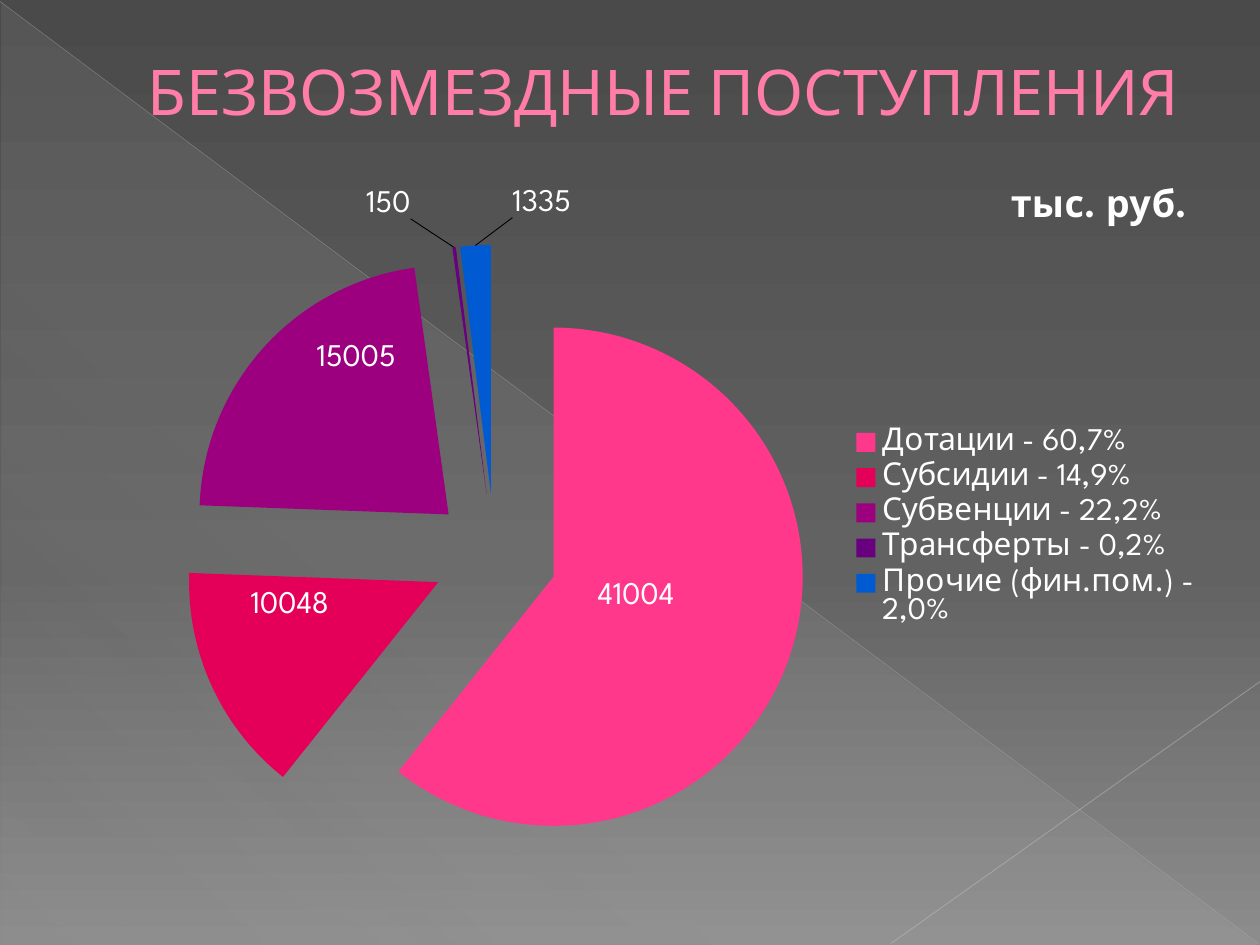
from lxml import etree
from pptx import Presentation
from pptx.chart.data import CategoryChartData
from pptx.dml.color import RGBColor
from pptx.enum import chart as kinds, shapes, text
from pptx.oxml import parse_xml
from pptx.oxml.ns import nsdecls, qn
from pptx.util import Cm, Pt

FONT = "League Spartan"
HUES = {
    "title": "FF7DA7", "edge": "B12761", "text": "FFFFFF", "lead": "000000",
    "long": "BFBFBF", "short": "C6C6C6",
}
TITLE = "БЕЗВОЗМЕЗДНЫЕ ПОСТУПЛЕНИЯ"
UNIT = "тыс. руб."
SLICES = [
    ("Дотации - 60,7%", 41004, "FF388C", (-0.03, -0.03)),
    ("Субсидии - 14,9%", 10048, "E40059", (-0.03, -0.04)),
    ("Субвенции - 22,2%", 15005, "9C007F", (0, -0.1)),
    ("Трансферты - 0,2%", 150, "68007F", (-0.07, -0.23)),
    ("Прочие (фин.пом.) - 2,0%", 1335, "005BD3", (0.05, -0.23)),
]
BACK = [(0, "4A4A4A", 100), (60, "626262", 100), (100, "8C8C8C", 100)]
SHEEN = [(0, "D2D2D2", 10), (70, "D2D2D2", 8), (100, "D2D2D2", 1)]
RAYS = [
    ((0, 0.03), (25.37, 19.02), "long", 0.39, 35),
    ((25.4, 13.74), (17.96, 19.02), "short", 0.47, 45),
]


def write(frame, words, size, hue="text", bold=False):
    frame.text = words
    style(frame.paragraphs[0].runs[0].font, size, hue, bold)
    return frame.paragraphs[0]


def style(font, size, hue="text", bold=False):
    font.name, font.size, font.bold = FONT, Pt(size), bold
    font.color.rgb = RGBColor.from_string(HUES[hue])


def blend(fill, stops, angle):
    fill.gradient()
    grad = fill._fill._gradFill
    steps = grad.find(qn("a:gsLst"))
    for old in list(steps):
        steps.remove(old)
    for pos, hue, alpha in stops:
        steps.append(parse_xml(
            f'<a:gs {nsdecls("a")} pos="{pos * 1000}"><a:srgbClr val="{hue}">'
            f'<a:alpha val="{alpha * 1000}"/></a:srgbClr></a:gs>'))
    grad.find(qn("a:lin")).set("ang", str(angle * 60000))


def place(node, index, **parts):
    for old in node.findall(qn("c:layout")):
        node.remove(old)
    body = "".join(f'<c:{key} val="{val}"/>' for key, val in parts.items())
    node.insert(index, parse_xml(
        f'<c:layout {nsdecls("c")}><c:manualLayout>{body}'
        '</c:manualLayout></c:layout>'))


def add_back(slide):
    blend(slide.background.fill, BACK, 90)
    sheen = slide.shapes.add_shape(
        shapes.MSO_SHAPE.RIGHT_TRIANGLE, Cm(0.03), Cm(0.05), Cm(25.35), Cm(19))
    sheen.shadow.inherit = False
    sheen.line.fill.background()
    blend(sheen.fill, SHEEN, 133)
    for start, end, hue, width, alpha in RAYS:
        ray = slide.shapes.add_connector(
            shapes.MSO_CONNECTOR.STRAIGHT, *map(Cm, start + end))
        ray.line.color.rgb = RGBColor.from_string(HUES[hue])
        ray.line.width = Pt(width)
        props = ray._element.spPr
        tint = props.find(".//" + qn("a:srgbClr"))
        etree.SubElement(tint, qn("a:alpha")).set("val", str(alpha * 1000))
        etree.SubElement(props, qn("a:effectLst"))


def add_title(slide):
    title = slide.shapes.title
    title.left, title.top, title.width, title.height = map(
        Cm, (1.27, 0.74, 22.86, 2.18))
    title.text_frame.vertical_anchor = text.MSO_ANCHOR.MIDDLE
    para = write(title.text_frame, TITLE, 36, "title")
    para.alignment = text.PP_ALIGN.CENTER
    props = para._p.get_or_add_pPr()
    props.set("marL", str(Cm(1.35)))
    props.set("indent", "0")
    para.runs[0].font._element.insert(0, parse_xml(
        f'<a:ln {nsdecls("a")} w="6350"><a:solidFill>'
        f'<a:srgbClr val="{HUES["edge"]}"/></a:solidFill></a:ln>'))
    slide.shapes._spTree.append(title._element)


def add_pie(slide):
    data = CategoryChartData()
    data.categories = [row[0] for row in SLICES]
    data.add_series("Series 1", [row[1] for row in SLICES])
    chart = slide.shapes.add_chart(
        kinds.XL_CHART_TYPE.PIE, Cm(0.89), Cm(3.33), Cm(23.6), Cm(14.6),
        data).chart
    style(chart.font, 18)
    chart.has_title = True
    write(chart.chart_title.text_frame, UNIT, 21.6, bold=True)
    place(chart.chart_title._element, 1,
          xMode="edge", yMode="edge", x=0.82, y=0.02)
    chart.has_legend = True
    chart.legend.position = kinds.XL_LEGEND_POSITION.RIGHT
    chart.legend.include_in_layout = False
    style(chart.legend.font, 18)

    plot = chart.plots[0]
    plot.vary_by_categories = True
    place(chart._chartSpace.chart.plotArea, 0, layoutTarget="inner",
          xMode="edge", yMode="edge", x=0.01, y=0.11, w=0.75, h=0.86)

    pie = plot.series[0]
    pie._element.find(qn("c:tx")).addnext(
        parse_xml(f'<c:explosion {nsdecls("c")} val="25"/>'))
    labels = pie.data_labels
    labels.show_value = True
    labels.position = kinds.XL_LABEL_POSITION.CENTER
    style(labels.font, 18)
    for i, (_, _, hue, (dx, dy)) in enumerate(SLICES):
        point = pie.points[i]
        point.format.fill.solid()
        point.format.fill.fore_color.rgb = RGBColor.from_string(hue)
        point.format.line.fill.background()
        label = point.data_label
        style(label.font, 18)
        label.position = kinds.XL_LABEL_POSITION.CENTER
        place(labels._element.findall(qn("c:dLbl"))[i], 1, x=dx, y=dy)
    for old in labels._element.findall(qn("c:showLeaderLines")):
        labels._element.remove(old)
    for part in (
        '<c:showLeaderLines {} val="1"/>',
        '<c:leaderLines {}><c:spPr><a:ln w="6350"><a:solidFill><a:srgbClr val="'
        + HUES["lead"] + '"/></a:solidFill></a:ln></c:spPr></c:leaderLines>',
    ):
        labels._element.append(parse_xml(part.format(nsdecls("c", "a"))))


def main():
    deck = Presentation()
    deck.slide_width, deck.slide_height = Cm(25.4), Cm(19.05)
    slide = deck.slides.add_slide(deck.slide_layouts[5])
    add_back(slide)
    add_title(slide)
    add_pie(slide)
    deck.save("out.pptx")


if __name__ == "__main__":
    main()
